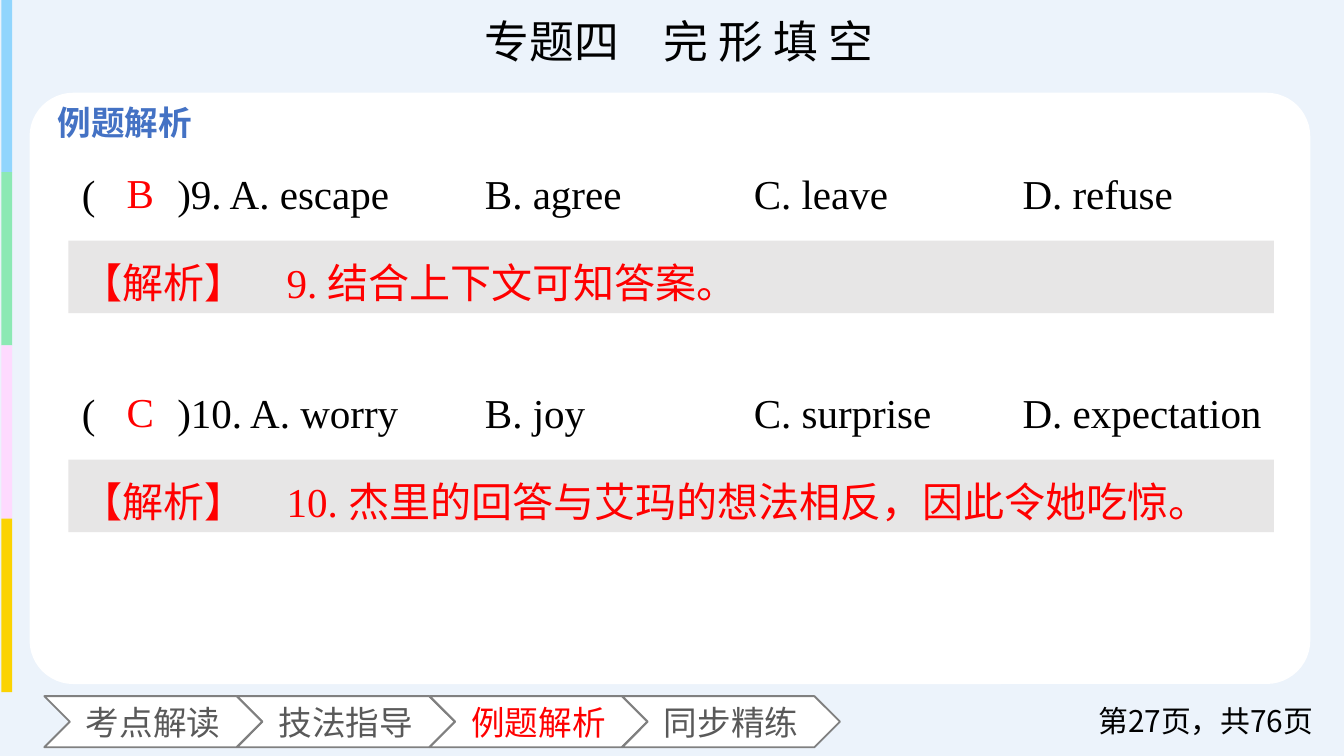
import pptx
import pptx.dml.color
import pptx.enum.shapes
import pptx.enum.text
import pptx.oxml.ns
import pptx.util
from lxml import etree

Inches = pptx.util.Inches
Shape = pptx.enum.shapes.MSO_SHAPE
Align = pptx.enum.text.PP_ALIGN
Anchor = pptx.enum.text.MSO_ANCHOR

SANS = "Noto Sans CJK SC"
SERIF = "Times New Roman"
COLORS = {
    "back": "ECF3FB", "panel": "FFFFFF", "note": "E7E6E6", "black": "000000",
    "red": "FF0000", "heading": "4472C4", "tab": "595959", "outline": "808080",
}
STRIPES = ["91D5FD", "8CE9B4", "FEDAFE", "FBD302"]
TABS = ["考点解读", "技法指导", "例题解析", "同步精练"]
CURRENT_TAB = "例题解析"
OPTION_STOPS = [3, 5, 7]
QUESTIONS = [
    (1.13, "B", ["(\u3000\u3000)9. A. escape", "B. agree", "C. leave", "D. refuse"],
     "【解析】\u30009. 结合上下文可知答案。"),
    (2.76, "C", ["(\u3000\u3000)10. A. worry", "B. joy", "C. surprise", "D. expectation"],
     "【解析】\u300010. 杰里的回答与艾玛的想法相反，因此令她吃惊。"),
]


def rgb(value):
    """Return the colour for a hex string."""
    return pptx.dml.color.RGBColor.from_string(value)


def add_panel(page, kind, place, fill, outline=None):
    """Add a filled preset shape, outlined only if a colour is given."""
    shape = page.shapes.add_shape(kind, *map(Inches, place))
    shape.shadow.inherit = False
    shape.fill.solid()
    shape.fill.fore_color.rgb = rgb(fill)
    if outline:
        shape.line.color.rgb = rgb(outline)
        shape.line.width = pptx.util.Pt(1)
    else:
        shape.line.fill.background()
    return shape


def write(shape, text, size, font, color, align=Align.LEFT, anchor=Anchor.TOP,
          spacing=1.0, bold=False, wrap=True, stops=()):
    """Write one formatted paragraph into a shape."""
    frame = shape.text_frame
    frame.word_wrap = wrap
    frame.vertical_anchor = anchor
    paragraph = frame.paragraphs[0]
    paragraph.alignment = align
    paragraph.line_spacing = spacing
    if stops:
        name = pptx.oxml.ns.qn
        tab_list = etree.SubElement(paragraph._p.get_or_add_pPr(), name("a:tabLst"))
        for stop in stops:
            etree.SubElement(tab_list, name("a:tab"), pos=str(Inches(stop)), algn="l")
    span = paragraph.add_run()
    span.text = text
    formats = {"size": pptx.util.Pt(size), "name": font, "bold": bold}
    for attribute, value in formats.items():
        setattr(span.font, attribute, value)
    span.font.color.rgb = rgb(color)


def add_text(page, place, *content, **options):
    """Add a text box holding one paragraph."""
    box = page.shapes.add_textbox(*map(Inches, place))
    write(box, *content, **options)


def add_frame(page):
    """Add the backdrop, title, side stripes and content panel."""
    add_panel(page, Shape.RECTANGLE, (0, 0, 10, 5.63), COLORS["back"])
    add_text(page, (1.76, 0.05, 6.58, 0.5), "专题四\u3000完 形 填 空", 24, SERIF,
             COLORS["black"], align=Align.CENTER)
    for index, color in enumerate(STRIPES):
        add_panel(page, Shape.RECTANGLE, (0.01, 1.29 * index - 0.01, 0.08, 1.29), color)
    panel = add_panel(page, Shape.ROUNDED_RECTANGLE, (0.22, 0.69, 9.53, 4.4), COLORS["panel"])
    panel.adjustments[0] = 0.074
    add_text(page, (0.33, 0.71, 1.29, 0.4), "例题解析", 18, SANS, COLORS["heading"], bold=True)


def add_tabs(page):
    """Add the row of chevron tabs, the first one in front."""
    for index in (1, 2, 3, 0):
        label = TABS[index]
        color = COLORS["red" if label == CURRENT_TAB else "tab"]
        chevron = add_panel(page, Shape.CHEVRON, (0.33 + 4.3 / 3 * index, 5.18, 1.62, 0.38),
                            COLORS["panel"], COLORS["outline"])
        write(chevron, label, 18, SANS, color, align=Align.CENTER,
              anchor=Anchor.MIDDLE, wrap=False)


def add_question(page, top, answer, options, explanation):
    """Add a question line, its explanation bar and its answer."""
    add_text(page, (0.51, top, 9.08, 0.54), "\t".join(options), 22, SERIF,
             COLORS["black"], spacing=1.2, stops=OPTION_STOPS)
    bar = add_panel(page, Shape.RECTANGLE, (0.51, top + 0.66, 8.97, 0.54), COLORS["note"])
    write(bar, explanation, 22, SERIF, COLORS["red"], spacing=1.2)
    add_text(page, (0.76, top + 0.07, 0.57, 0.47), answer, 22, SERIF,
             COLORS["red"], align=Align.CENTER)


def main():
    """Build and save the slide."""
    deck = pptx.Presentation()
    deck.slide_width = Inches(10)
    deck.slide_height = deck.slide_width * 9 // 16
    page = deck.slides.add_slide(deck.slide_layouts[6])
    add_frame(page)
    add_tabs(page)
    add_text(page, (7.84, 5.21, 2.03, 0.3), "第27页，共76页", 16, SANS,
             COLORS["black"], align=Align.RIGHT, anchor=Anchor.MIDDLE)
    for question in QUESTIONS:
        add_question(page, *question)
    deck.save("out.pptx")


if __name__ == "__main__":
    main()
